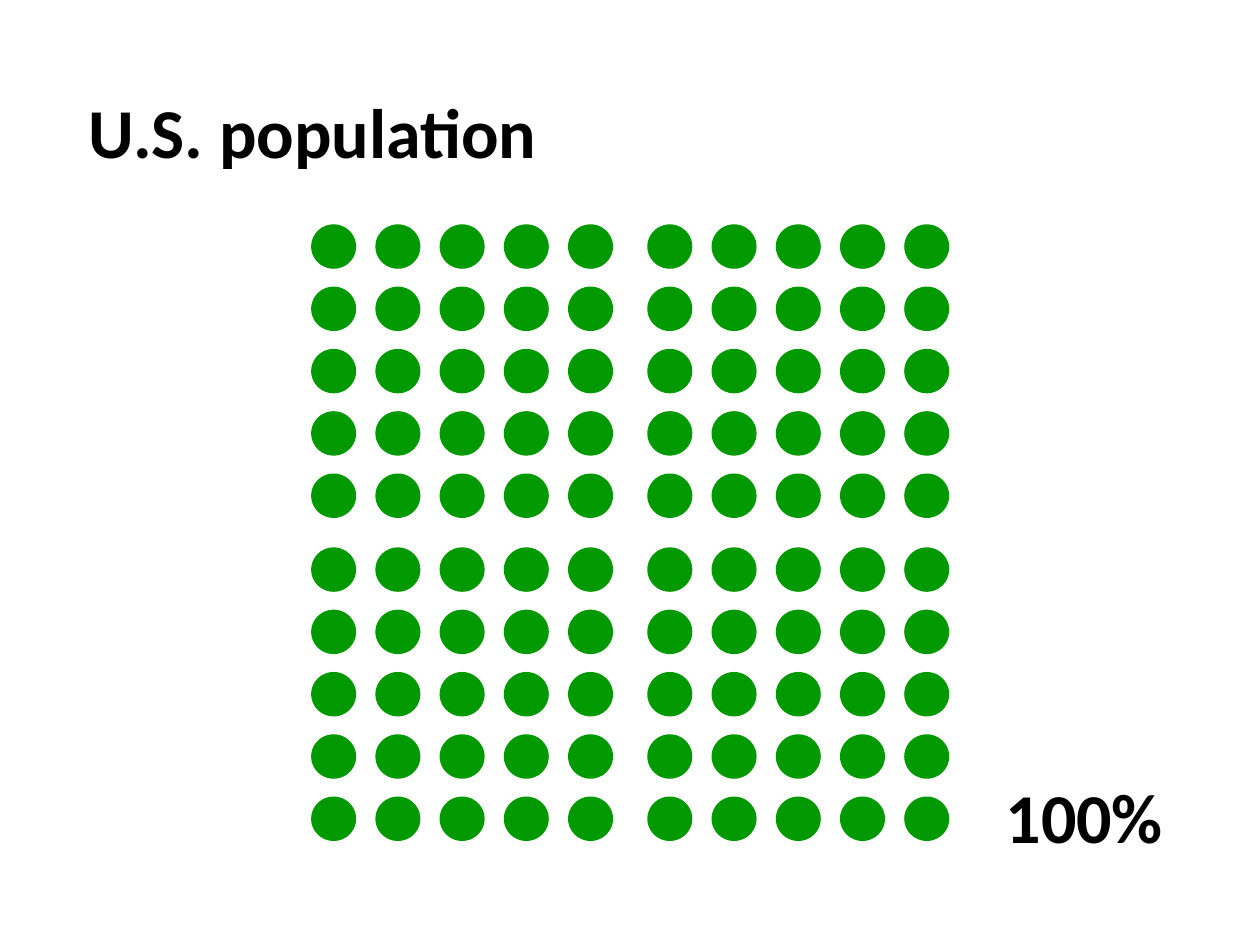
from dataclasses import dataclass
from itertools import product

from pptx import Presentation
from pptx.dml.color import RGBColor
from pptx.enum.shapes import MSO_SHAPE as Shape
from pptx.enum.text import MSO_AUTO_SIZE as AutoSize
from pptx.util import Pt


@dataclass(frozen=True)
class Theme:
    font: str = "Calibri"
    text_size: float = 40
    text_color: RGBColor = RGBColor(0x00, 0x00, 0x00)
    dot_color: RGBColor = RGBColor(0x00, 0x99, 0x00)


THEME = Theme()

BLOCK_LEFTS = (177.8, 369.9)
BLOCK_TOPS = (128.2, 312.8)
DOTS_PER_SIDE = 5
DOT_WIDTH, DOT_HEIGHT = 25.7, 25.4
COLUMN_STEP, ROW_STEP = 36.7, 35.6


def set_all(target, values):
    for name, value in values.items():
        setattr(target, name, value)


def add_label(page, text, left, top, width, height, wrap):
    box = page.shapes.add_textbox(Pt(left), Pt(top), Pt(width), Pt(height))
    set_all(box.text_frame, {
        "margin_left": Pt(4.5), "margin_right": Pt(4.5),
        "margin_top": Pt(2.25), "margin_bottom": Pt(2.25),
        "word_wrap": wrap, "auto_size": AutoSize.SHAPE_TO_FIT_TEXT,
    })
    span = box.text_frame.paragraphs[0].add_run()
    span.text = text
    set_all(span.font, {"name": THEME.font, "size": Pt(THEME.text_size), "bold": True})
    span.font.color.rgb = THEME.text_color


def add_dot(page, left, top):
    dot = page.shapes.add_shape(
        Shape.OVAL, Pt(left), Pt(top), Pt(DOT_WIDTH), Pt(DOT_HEIGHT))
    dot.shadow.inherit = False
    dot.fill.solid()
    dot.fill.fore_color.rgb = THEME.dot_color
    dot.line.fill.background()


def add_dot_block(page, left, top):
    """Draw one square quarter of the hundred dots."""
    for row, column in product(range(DOTS_PER_SIDE), repeat=2):
        add_dot(page, left + column * COLUMN_STEP, top + row * ROW_STEP)


def main():
    deck = Presentation()
    set_all(deck, {"slide_width": Pt(720), "slide_height": Pt(540)})
    page = deck.slides.add_slide(deck.slide_layouts[6])

    add_label(page, "U.S. population", 46.1, 48.2, 267, 52.6, wrap=False)
    add_label(page, "100%", 570.2, 439.9, 134, 52.6, wrap=True)
    for top, left in product(BLOCK_TOPS, BLOCK_LEFTS):
        add_dot_block(page, left, top)

    deck.save("out.pptx")


if __name__ == "__main__":
    main()
